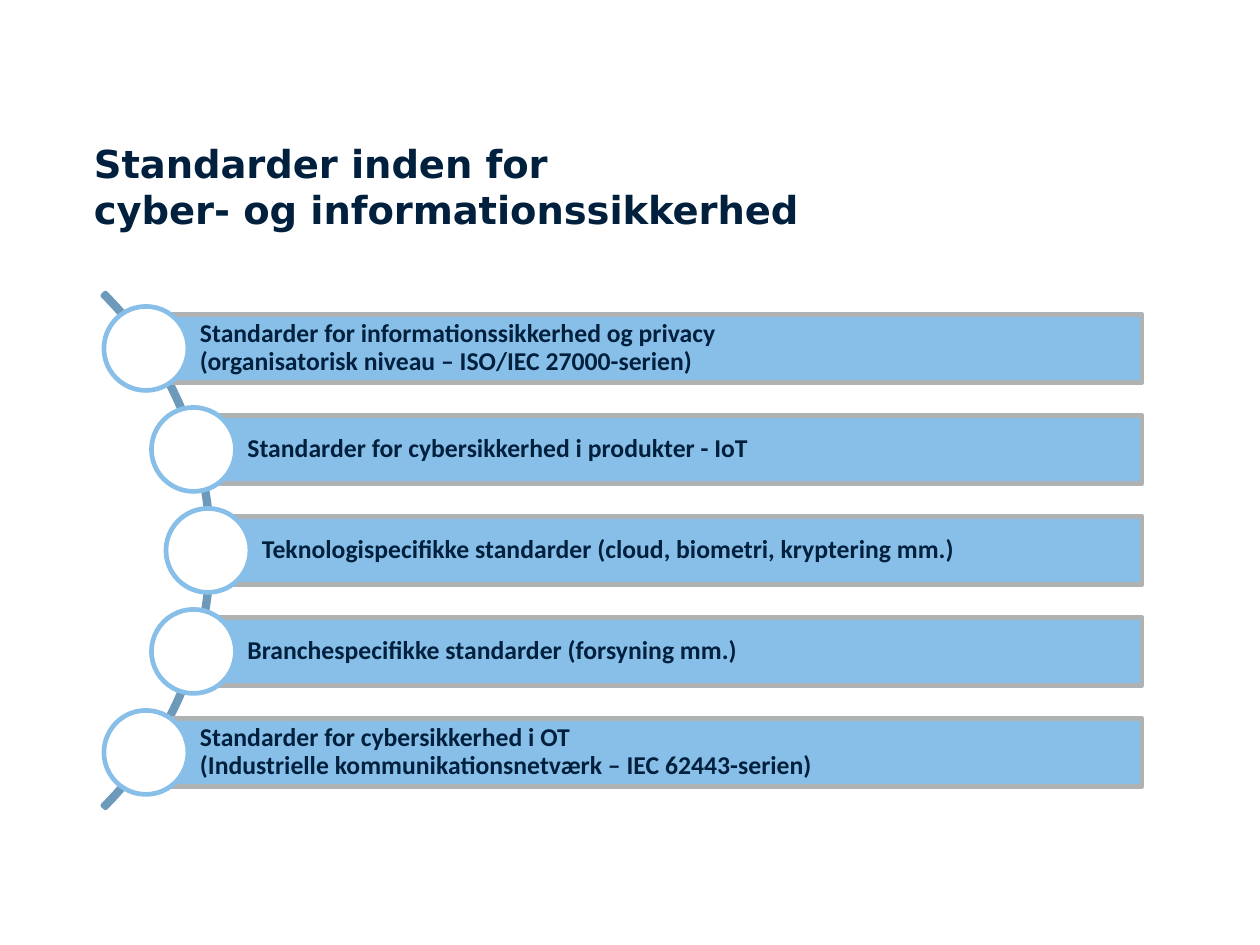
"""Builds the slide on standards for cyber and information security."""
from dataclasses import dataclass
from math import sqrt

from pptx import Presentation
from pptx.dml.color import RGBColor
from pptx.enum.shapes import MSO_SHAPE
from pptx.enum.text import MSO_ANCHOR, MSO_AUTO_SIZE, PP_ALIGN
from pptx.util import Emu, Pt


@dataclass(frozen=True)
class Theme:
    """Colours, fonts and type sizes of the slide."""
    ink: str = "00203D"
    bar: str = "88BFE8"
    bar_edge: str = "AEB2B2"
    arc: str = "6D99BA"
    paper: str = "FFFFFF"
    title_font: str = "DejaVu Sans"
    body_font: str = "Calibri"
    title_size: float = 16.5
    body_size: float = 11
    line_width: float = 2


THEME = Theme()
TITLE = "Standarder inden for\vcyber- og informationssikkerhed"
STANDARDS = [
    "Standarder for informationssikkerhed og privacy\v(organisatorisk niveau – ISO/IEC 27000-serien)",
    "Standarder for cybersikkerhed i produkter - IoT",
    "Teknologispecifikke standarder (cloud, biometri, kryptering mm.)",
    "Branchespecifikke standarder (forsyning mm.)",
    "Standarder for cybersikkerhed i OT\v(Industrielle kommunikationsnetværk – IEC 62443-serien)",
]


def px(length):
    """Turn pixels into EMU."""
    return Emu(round(length * 914400 / 168))


def write(frame, text, font, size, margins, anchor, spacing):
    """Fill a text frame with one bold, left-aligned paragraph."""
    left, top, right, bottom = map(px, margins)
    frame_format = {
        "text": text, "word_wrap": True, "auto_size": MSO_AUTO_SIZE.NONE,
        "vertical_anchor": anchor, "margin_left": left, "margin_top": top,
        "margin_right": right, "margin_bottom": bottom,
    }
    for name, value in frame_format.items():
        setattr(frame, name, value)
    paragraph = frame.paragraphs[0]
    paragraph.alignment = PP_ALIGN.LEFT
    paragraph.line_spacing = spacing
    for run in paragraph.runs:
        for name, value in {"name": font, "size": Pt(size), "bold": True}.items():
            setattr(run.font, name, value)
        run.font.color.rgb = RGBColor.from_string(THEME.ink)


def draw(slide, preset, box, edge, fill=None):
    """Add an outlined preset shape in the given box."""
    shape = slide.shapes.add_shape(preset, *map(px, box))
    shape.shadow.inherit = False
    if fill:
        shape.fill.solid()
        shape.fill.fore_color.rgb = RGBColor.from_string(fill)
    else:
        shape.fill.background()
    shape.line.color.rgb = RGBColor.from_string(edge)
    shape.line.width = Pt(THEME.line_width)
    return shape


def place_title(slide, box):
    """Move and format the title placeholder."""
    title = slide.shapes.title
    for name, value in zip(("left", "top", "width", "height"), box):
        setattr(title, name, px(value))
    write(title.text_frame, TITLE, THEME.title_font, THEME.title_size,
          (0, 0, 0, 0), MSO_ANCHOR.TOP, 1.0)


def place_standards(slide, box):
    """Draw the arc and hang one bar and circle per standard on it."""
    left, top, width, height = box
    radius, curve, bar_height, circle = 364, 360, 68, 84
    pitch = height / len(STANDARDS)
    centre_x, centre_y = left - 256, top + height / 2

    arc = draw(slide, MSO_SHAPE.BLOCK_ARC,
               (centre_x - radius, centre_y - radius, 2 * radius, 2 * radius), THEME.arc)
    for index, value in enumerate((189, 27, 0.005)):
        arc.adjustments[index] = value

    for index, standard in enumerate(STANDARDS):
        y = top + (index + 0.5) * pitch
        x = centre_x + sqrt(curve ** 2 - (y - centre_y) ** 2)
        bar = draw(slide, MSO_SHAPE.RECTANGLE,
                   (x, y - bar_height / 2, left + width - x, bar_height),
                   THEME.bar_edge, THEME.bar)
        write(bar.text_frame, standard, THEME.body_font, THEME.body_size,
              (54, 5, 5, 5), MSO_ANCHOR.MIDDLE, 0.9)
        draw(slide, MSO_SHAPE.OVAL,
             (x - circle / 2, y - circle / 2, circle, circle), THEME.bar, THEME.paper)


def main():
    """Build and save the presentation."""
    presentation = Presentation()
    presentation.slide_width, presentation.slide_height = px(1260), px(945)
    slide = presentation.slides.add_slide(presentation.slide_layouts[5])
    slide.background.fill.solid()
    slide.background.fill.fore_color.rgb = RGBColor.from_string(THEME.paper)
    place_title(slide, (94, 140, 1055, 102))
    place_standards(slide, (104, 298, 1038, 505))
    presentation.save("out.pptx")


if __name__ == "__main__":
    main()
